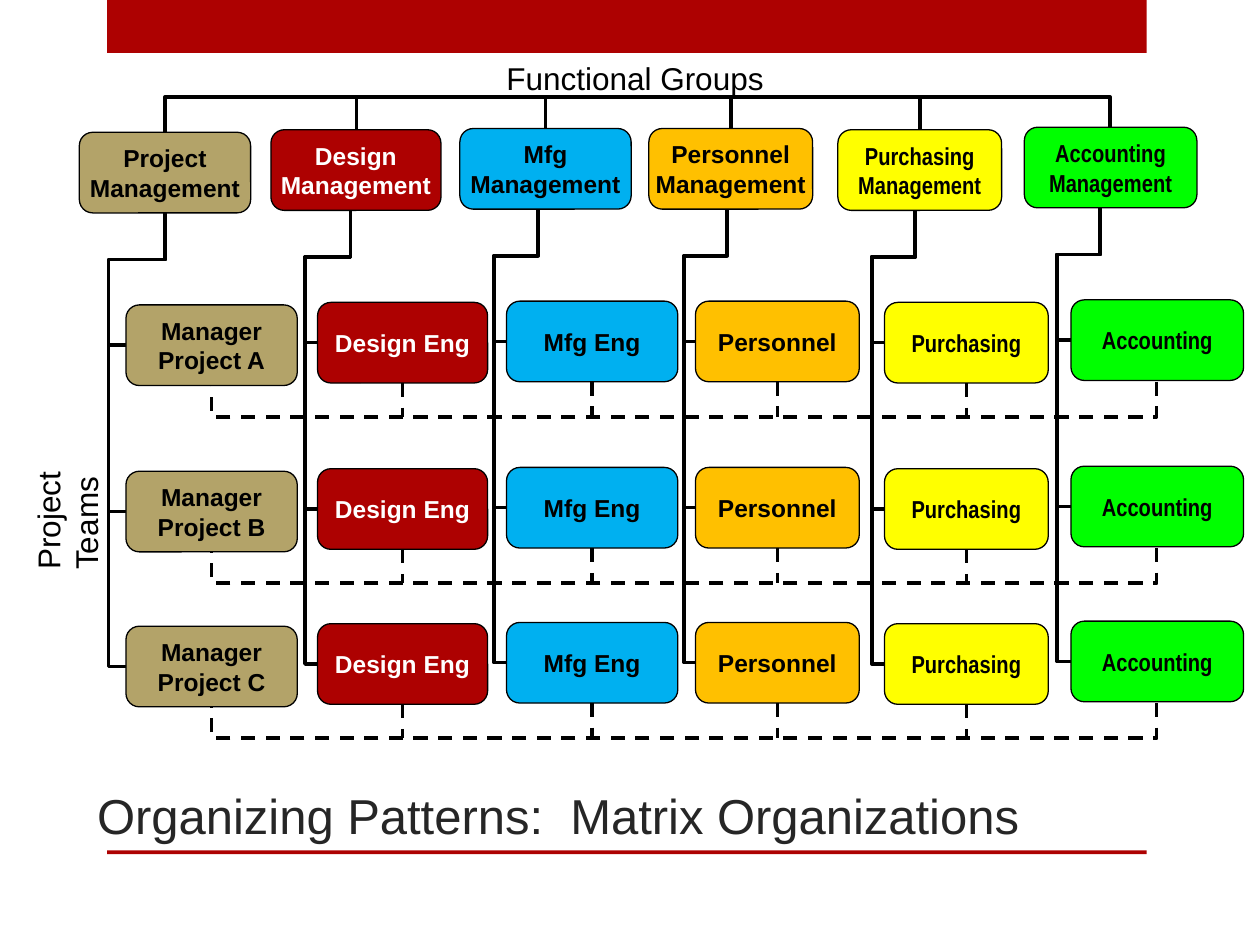
"""Build a slide with a matrix organization chart: functional groups by project teams."""
import pptx
import pptx.dml.color
import pptx.enum.dml
import pptx.enum.shapes
import pptx.enum.text
import pptx.oxml
import pptx.oxml.ns
import pptx.util
from lxml import etree
from pptx.util import Inches

RED = pptx.dml.color.RGBColor(0xAD, 0x01, 0x01)
TAN = pptx.dml.color.RGBColor(0xB3, 0xA3, 0x69)
BLUE = pptx.dml.color.RGBColor(0x00, 0xB0, 0xF0)
ORANGE = pptx.dml.color.RGBColor(0xFF, 0xC0, 0x00)
YELLOW = pptx.dml.color.RGBColor(0xFF, 0xFF, 0x00)
GREEN = pptx.dml.color.RGBColor(0x00, 0xFF, 0x00)
BLACK = pptx.dml.color.RGBColor(0x00, 0x00, 0x00)
WHITE = pptx.dml.color.RGBColor(0xFF, 0xFF, 0xFF)
CHARCOAL = pptx.dml.color.RGBColor(0x26, 0x26, 0x26)

BOX_HEIGHT = 0.64
TEAM_SHIFT_X, TEAM_SHIFT_Y = 0.37, 1.37
BUS_Y = 0.77
TEAM_BUS_Y = 3.31
TEAM_OFFSETS = {"A": 0, "B": 1.32, "C": 2.55}

GROUPS = [
    ("Project", "Manager\nProject ", TAN, BLACK, "Arial", 0.63, 1.05, 1.36, 1.31, 0.86),
    ("Design", "Design Eng", RED, WHITE, "Arial", 2.15, 1.03, 1.35, 2.78, 2.42),
    ("Mfg", "Mfg Eng", BLUE, BLACK, "Arial", 3.65, 1.02, 1.36, 4.27, 3.92),
    ("Personnel", "Personnel", ORANGE, BLACK, "Arial", 5.15, 1.02, 1.3, 5.77, 5.43),
    ("Purchasing", "Purchasing", YELLOW, BLACK, "Arial Narrow", 6.65, 1.03, 1.3, 7.26, 6.92),
    ("Accounting", "Accounting", GREEN, BLACK, "Arial Narrow", 8.13, 1.01, 1.37, 8.73, 8.39),
]

deck = pptx.Presentation()
deck.slide_width, deck.slide_height = Inches(10), Inches(7.5)
slide = deck.slides.add_slide(deck.slide_layouts[5])


def add_box(wording, left, top, width, fill, ink, font):
    box = slide.shapes.add_shape(
        pptx.enum.shapes.MSO_SHAPE.ROUNDED_RECTANGLE,
        Inches(left), Inches(top), Inches(width), Inches(BOX_HEIGHT))
    box.shadow.inherit = False
    box.fill.solid()
    box.fill.fore_color.rgb = fill
    box.line.color.rgb = BLACK
    box.line.width = pptx.util.Pt(0.75)
    frame = box.text_frame
    frame.word_wrap = False
    frame.vertical_anchor = pptx.enum.text.MSO_ANCHOR.MIDDLE
    frame.text = wording
    for paragraph in frame.paragraphs:
        paragraph.alignment = pptx.enum.text.PP_ALIGN.CENTER
        for run in paragraph.runs:
            run.font.size = pptx.util.Pt(14)
            run.font.bold = True
            run.font.name = font
            run.font.color.rgb = ink
    return box


def add_link(start, end, bend_y=None, bend_x=None, dashed=False):
    (x0, y0), (x1, y1) = start, end
    kinds = pptx.enum.shapes.MSO_CONNECTOR
    link = slide.shapes.add_connector(
        kinds.STRAIGHT if bend_y is None else kinds.ELBOW,
        Inches(x0), Inches(y0), Inches(x1), Inches(y1))
    properties = link._element.spPr
    if bend_y is not None:
        run_down, run_left = y1 - y0, x0 - x1
        link.left = Inches((x0 + x1 - run_down) / 2)
        link.top = Inches((y0 + y1 - run_left) / 2)
        link.width, link.height = Inches(run_down), Inches(run_left)
        turn = properties.find(pptx.oxml.ns.qn("a:xfrm"))
        turn.attrib.pop("flipH", None)
        turn.set("rot", "5400000")
        bends = [(bend_y - y0) / run_down]
        if bend_x is not None:
            bends.append((x0 - bend_x) / run_left)
        geometry = properties.find(pptx.oxml.ns.qn("a:prstGeom"))
        geometry.set("prst", f"bentConnector{len(bends) + 2}")
        guides = geometry.find(pptx.oxml.ns.qn("a:avLst"))
        for number, bend in enumerate(bends, 1):
            etree.SubElement(guides, pptx.oxml.ns.qn("a:gd"),
                             name=f"adj{number}", fmla=f"val {round(bend * 100000)}")
    link.line.color.rgb = BLACK
    link.line.width = pptx.util.Pt(2)
    if dashed:
        link.line.dash_style = pptx.enum.dml.MSO_LINE.DASH
    etree.SubElement(properties, pptx.oxml.ns.qn("a:effectLst"))
    return link


for top, height in ((0, 0.42), (6.75, 0.03)):
    band = slide.shapes.add_shape(
        pptx.enum.shapes.MSO_SHAPE.RECTANGLE,
        Inches(0.85), Inches(top), Inches(8.25), Inches(height))
    band.shadow.inherit = False
    band.fill.solid()
    band.fill.fore_color.rgb = RED
    band.line.fill.background()

title = slide.shapes.title
title.left, title.top = Inches(0.67), Inches(6.08)
title.width, title.height = Inches(8.5), Inches(0.67)
title.text_frame.text = "Organizing Patterns:  Matrix Organizations"
title.text_frame.auto_size = pptx.enum.text.MSO_AUTO_SIZE.NONE
title.text_frame.vertical_anchor = pptx.enum.text.MSO_ANCHOR.BOTTOM
title_line = title.text_frame.paragraphs[0]
title_line.alignment = pptx.enum.text.PP_ALIGN.LEFT
title_line.runs[0].font.size = pptx.util.Pt(28)
title_line.runs[0].font.name = "Arial"
title_line.runs[0].font.color.rgb = CHARCOAL

for right_x, right_y, left_x, left_y in (
        (8.81, 1.01, 1.31, 1.05), (7.3, 1.03, 2.83, 1.04), (5.8, 1.02, 4.33, 1.03)):
    add_link((right_x, right_y), (left_x, left_y), BUS_Y)

for group, role, fill, ink, font, left, top, width, stem_x, trunk_x in GROUPS:
    add_box(f"{group}\nManagement", left, top, width, fill, ink, font)
    head_bottom = top + BOX_HEIGHT
    team_left = left + TEAM_SHIFT_X
    center_x = team_left + width / 2
    for team, offset in TEAM_OFFSETS.items():
        team_top = top + TEAM_SHIFT_Y + offset
        add_link((stem_x, head_bottom), (team_left, team_top + BOX_HEIGHT / 2),
                 head_bottom + 0.37, trunk_x)
        wording = role + team if group == "Project" else role
        member = add_box(wording, team_left, team_top, width, fill, ink, font)
        if group not in ("Project", "Accounting"):
            drop = add_link((center_x, team_top + BOX_HEIGHT),
                            (center_x, TEAM_BUS_Y + offset), dashed=True)
            drop.begin_connect(member, 2)

for offset in TEAM_OFFSETS.values():
    add_link((9.18, 3.03 + offset), (1.68, 3.06 + offset), TEAM_BUS_Y + offset, dashed=True)

for wording, left, top, width, height, direction in (
        ("Functional Groups", 3.92, 0.42, 2.48, 0.4, "horz"),
        ("Project Teams", 0.18, 2.87, 0.5, 1.75, "vert270")):
    label = slide.shapes.add_textbox(Inches(left), Inches(top), Inches(width), Inches(height))
    label.text_frame.word_wrap = True
    label.text_frame.auto_size = pptx.enum.text.MSO_AUTO_SIZE.SHAPE_TO_FIT_TEXT
    label.text_frame._txBody.bodyPr.set("vert", direction)
    label.text_frame.text = wording
    label_font = label.text_frame.paragraphs[0].runs[0].font
    label_font.size = pptx.util.Pt(18)
    label_font.name = "Arial"
    label_font.color.rgb = BLACK

deck.save("out.pptx")
